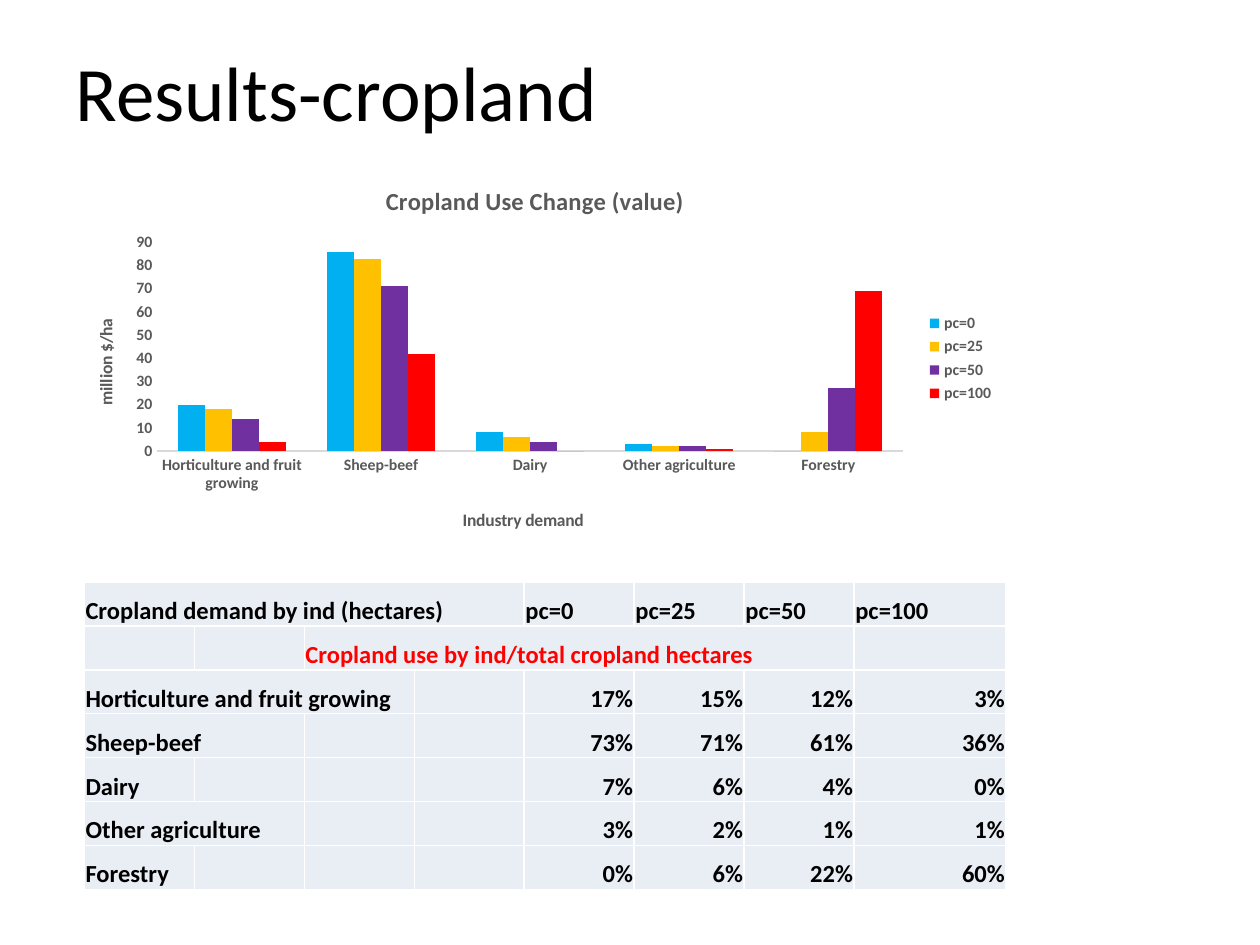
import pptx
import pptx.chart.data
import pptx.dml.color
import pptx.enum.chart
import pptx.enum.text
import pptx.oxml
import pptx.oxml.ns
import pptx.util
from pptx.util import Pt

FONT = "Calibri"
COLORS = {"black": "000000", "gray": "595959", "axis": "D9D9D9", "white": "FFFFFF",
          "cell": "E9EDF4", "blue": "00B0F0", "amber": "FFC000",
          "purple": "7030A0", "red": "FF0000"}

TITLE = "Results-cropland"
CHART_TITLE = "Cropland Use Change (value)"
CATEGORIES = ["Horticulture and fruit growing", "Sheep-beef", "Dairy",
              "Other agriculture", "Forestry"]
SERIES = [
    ("pc=0", "blue", (20, 86, 8, 3, 0)),
    ("pc=25", "amber", (18, 83, 6, 2, 8)),
    ("pc=50", "purple", (14, 71, 4, 2, 27)),
    ("pc=100", "red", (4, 42, 0, 1, 69)),
]
HEADING = "Cropland demand by ind (hectares)"
SUBHEADING = "Cropland use by ind/total cropland hectares"
# Columns spanned by the label, then one share for each series
SHARES = [
    (3, ("17%", "15%", "12%", "3%")),
    (2, ("73%", "71%", "61%", "36%")),
    (1, ("7%", "6%", "4%", "0%")),
    (2, ("3%", "2%", "1%", "1%")),
    (1, ("0%", "6%", "22%", "60%")),
]
LABEL_COLUMNS = 4
COLUMN_WIDTHS = [62.85] * 7 + [86.75]
ROW_HEIGHT = 25.1


def rgb(name):
    return pptx.dml.color.RGBColor.from_string(COLORS[name])


def style_font(font, size, color, bold=True):
    font.name = FONT
    font.size = Pt(size)
    font.bold = bold
    font.color.rgb = rgb(color)


def add_text(text_frame, text, size, color, bold=True):
    paragraph = text_frame.paragraphs[0]
    run = paragraph.add_run()
    run.text = text
    style_font(run.font, size, color, bold)
    return paragraph


def place(element, x, y, width=None, height=None):
    """Give a chart part a manual layout, in fractions of the chart."""
    for old in element.findall(pptx.oxml.ns.qn("c:layout")):
        element.remove(old)
    parts = [("xMode", "edge"), ("yMode", "edge"), ("x", x), ("y", y)]
    if width:
        parts = [("layoutTarget", "inner")] + parts + [("w", width), ("h", height)]
    children = "".join(f'<c:{tag} val="{value}"/>' for tag, value in parts)
    layout = pptx.oxml.parse_xml(
        f'<c:layout {pptx.oxml.ns.nsdecls("c")}><c:manualLayout>{children}'
        "</c:manualLayout></c:layout>")
    before = [child for child in element
              if child.tag in (pptx.oxml.ns.qn("c:tx"), pptx.oxml.ns.qn("c:legendPos"))]
    element.insert(element.index(before[-1]) + 1 if before else 0, layout)


def add_title(slide):
    title = slide.shapes.title
    title.left, title.top, title.width, title.height = Pt(36), Pt(21.6), Pt(648), Pt(90)
    title.text_frame.vertical_anchor = pptx.enum.text.MSO_ANCHOR.TOP
    paragraph = add_text(title.text_frame, TITLE, 44, "black", bold=False)
    paragraph.alignment = pptx.enum.text.PP_ALIGN.LEFT


def add_axis_title(axis, text, x, y):
    add_text(axis.axis_title.text_frame, text, 10, "gray")
    place(axis.axis_title._element, x, y)


def add_cropland_chart(slide):
    data = pptx.chart.data.CategoryChartData()
    data.categories = CATEGORIES
    for name, _, values in SERIES:
        data.add_series(name, values)
    chart = slide.shapes.add_chart(
        pptx.enum.chart.XL_CHART_TYPE.COLUMN_CLUSTERED,
        Pt(36), Pt(94.3), Pt(539.3), Pt(221), data).chart
    style_font(chart.font, 10, "black", bold=False)

    add_text(chart.chart_title.text_frame, CHART_TITLE, 14, "gray")
    chart.chart_title.include_in_layout = False
    place(chart._chartSpace.chart.plotArea, 0.1, 0.2, 0.79, 0.54)

    plot = chart.plots[0]
    plot.gap_width = 150
    plot.overlap = 0
    plot.vary_by_categories = False
    for series, (_, color, _) in zip(plot.series, SERIES):
        series.format.fill.solid()
        series.format.fill.fore_color.rgb = rgb(color)

    for axis in (chart.category_axis, chart.value_axis):
        axis.has_major_gridlines = False
        axis.major_tick_mark = axis.minor_tick_mark = pptx.enum.chart.XL_TICK_MARK.NONE
        style_font(axis.tick_labels.font, 9, "gray")
    chart.category_axis.format.line.color.rgb = rgb("axis")
    chart.category_axis.format.line.width = Pt(0.75)
    chart.value_axis.format.line.fill.background()
    chart.value_axis.minimum_scale = 0
    chart.value_axis.maximum_scale = 90
    chart.value_axis.major_unit = 10
    add_axis_title(chart.category_axis, "Industry demand", 0.42, 0.88)
    add_axis_title(chart.value_axis, "million $/ha", 0.03, 0.39)

    chart.has_legend = True
    chart.legend.position = pptx.enum.chart.XL_LEGEND_POSITION.RIGHT
    chart.legend.include_in_layout = False
    style_font(chart.legend.font, 9, "gray")


def style_cell(cell):
    cell.margin_left = cell.margin_right = cell.margin_top = Pt(0.7)
    cell.margin_bottom = Pt(0)
    cell.vertical_anchor = pptx.enum.text.MSO_ANCHOR.BOTTOM
    properties = cell._tc.get_or_add_tcPr()
    for side in ("lnL", "lnR", "lnT", "lnB"):
        properties.append(pptx.oxml.parse_xml(
            f'<a:{side} {pptx.oxml.ns.nsdecls("a")} w="{Pt(1)}"><a:solidFill>'
            f'<a:srgbClr val="{COLORS["white"]}"/></a:solidFill></a:{side}>'))
    cell.fill.solid()
    cell.fill.fore_color.rgb = rgb("cell")


def write_cell(table, row, column, text, span=1, color="black"):
    cell = table.cell(row, column)
    if span > 1:
        cell.merge(table.cell(row, column + span - 1))
    return add_text(cell.text_frame, text, 14, color)


def add_share_table(slide):
    row_count = len(SHARES) + 2
    table = slide.shapes.add_table(
        row_count, len(COLUMN_WIDTHS), Pt(48.2), Pt(332.6),
        Pt(sum(COLUMN_WIDTHS)), Pt(ROW_HEIGHT * row_count)).table
    table.first_row = table.horz_banding = False
    for column, width in zip(table.columns, COLUMN_WIDTHS):
        column.width = Pt(width)
    for row in table.rows:
        row.height = Pt(ROW_HEIGHT)
    for cell in table.iter_cells():
        style_cell(cell)

    write_cell(table, 0, 0, HEADING, LABEL_COLUMNS)
    for column, (name, _, _) in enumerate(SERIES, LABEL_COLUMNS):
        write_cell(table, 0, column, name)
    write_cell(table, 1, 2, SUBHEADING, 5, "red")
    for row, (label, (span, shares)) in enumerate(zip(CATEGORIES, SHARES), 2):
        write_cell(table, row, 0, label, span)
        for column, share in enumerate(shares, LABEL_COLUMNS):
            paragraph = write_cell(table, row, column, share)
            paragraph.alignment = pptx.enum.text.PP_ALIGN.RIGHT


def main():
    presentation = pptx.Presentation()
    presentation.slide_width, presentation.slide_height = Pt(720), Pt(540)
    slide = presentation.slides.add_slide(presentation.slide_layouts[5])
    add_title(slide)
    add_cropland_chart(slide)
    add_share_table(slide)
    presentation.save("out.pptx")


if __name__ == "__main__":
    main()
